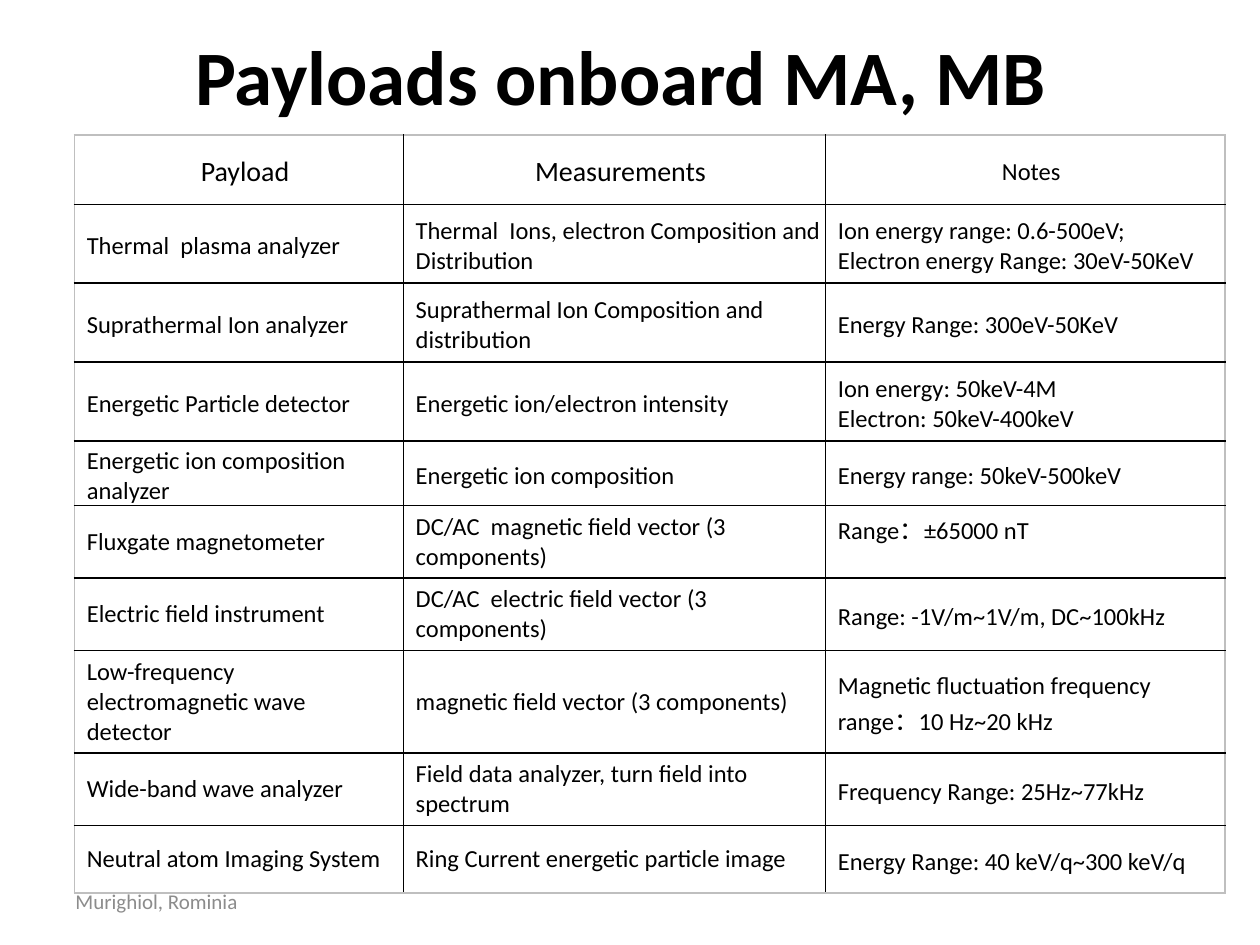
import pptx
import pptx.util
from lxml import etree
from pptx.dml.color import RGBColor
from pptx.enum.text import MSO_ANCHOR, PP_ALIGN
from pptx.oxml.ns import qn
from pptx.util import Cm, Pt

FONT = "Calibri"
BLACK = RGBColor(0x00, 0x00, 0x00)
WHITE = RGBColor(0xFF, 0xFF, 0xFF)
FOOTER_GREY = RGBColor(0x8C, 0x8C, 0x8C)
FRAME_GREY = RGBColor(0xBF, 0xBF, 0xBF)

TITLE = "Payloads onboard MA, MB "
FOOTER = "Murighiol, Rominia"
ROWS = [
    ("Payload", "Measurements", "Notes"),
    ("Thermal  plasma analyzer",
     "Thermal  Ions, electron Composition and Distribution",
     "Ion energy range: 0.6-500eV;\nElectron energy Range: 30eV-50KeV"),
    ("Suprathermal Ion analyzer",
     "Suprathermal Ion Composition and distribution",
     "Energy Range: 300eV-50KeV"),
    ("Energetic Particle detector",
     "Energetic ion/electron intensity",
     "Ion energy: 50keV-4M\nElectron: 50keV-400keV"),
    ("Energetic ion composition analyzer",
     "Energetic ion composition",
     "Energy range: 50keV-500keV"),
    ("Fluxgate magnetometer",
     "DC/AC  magnetic field vector (3 components)",
     "Range：±65000 nT"),
    ("Electric field instrument",
     "DC/AC  electric field vector (3 components)",
     "Range: -1V/m~1V/m, DC~100kHz"),
    ("Low-frequency electromagnetic wave detector",
     "magnetic field vector (3 components)",
     "Magnetic fluctuation frequency range：10 Hz~20 kHz"),
    ("Wide-band wave analyzer",
     "Field data analyzer, turn field into spectrum",
     "Frequency Range: 25Hz~77kHz"),
    ("Neutral atom Imaging System",
     "Ring Current energetic particle image",
     "Energy Range: 40 keV/q~300 keV/q"),
]
COLUMN_WIDTHS = [6.63, 8.51, 8.05]
ROW_HEIGHTS = [1.4, 1.59, 1.59, 1.59, 1.3, 1.46, 1.46, 2.06, 1.46, 1.36]
FIRST_FIELD_ROW = 5  # from here the first two columns have even margins
TOP_ANCHORED = (5, 2)


def format_text(text_frame, size, color, alignment=PP_ALIGN.LEFT, bold=False):
    for paragraph in text_frame.paragraphs:
        paragraph.alignment = alignment
        for run in paragraph.runs:
            run.font.name = FONT
            run.font.size = Pt(size)
            run.font.bold = bold
            run.font.color.rgb = color


def add_border(cell, side, color):
    """Draw one side (L, R, T or B) of a cell; call before filling the cell."""
    properties = cell._tc.get_or_add_tcPr()
    line = etree.SubElement(properties, qn(f"a:ln{side}"), w=str(Pt(1)))
    fill = etree.SubElement(line, qn("a:solidFill"))
    etree.SubElement(fill, qn("a:srgbClr"), val=str(color))


def format_cell(cell, row, column):
    outer_sides = {
        "L": column == 0,
        "R": column == len(COLUMN_WIDTHS) - 1,
        "T": row == 0,
        "B": row == len(ROWS) - 1,
    }
    for side, is_outer in outer_sides.items():
        add_border(cell, side, FRAME_GREY if is_outer else BLACK)
    cell.fill.solid()
    cell.fill.fore_color.rgb = WHITE

    even_margins = row >= FIRST_FIELD_ROW and column < 2
    cell.margin_left = Cm(0.25)
    cell.margin_right = Cm(0.25 if even_margins else 0)
    cell.margin_top = Cm(0.13 if even_margins else 0.1)
    cell.margin_bottom = Cm(0.13 if even_margins else 0)
    is_top = (row, column) == TOP_ANCHORED
    cell.vertical_anchor = MSO_ANCHOR.TOP if is_top else MSO_ANCHOR.MIDDLE

    size = 16 if row == 0 and column < 2 else 14
    alignment = PP_ALIGN.CENTER if row == 0 else PP_ALIGN.LEFT
    format_text(cell.text_frame, size, BLACK, alignment)


def add_payload_table(slide):
    table = slide.shapes.add_table(
        len(ROWS), len(COLUMN_WIDTHS), Cm(1.5), Cm(2.72),
        Cm(sum(COLUMN_WIDTHS)), Cm(sum(ROW_HEIGHTS))).table
    table.first_row = False
    table.horz_banding = False
    for column, width in zip(table.columns, COLUMN_WIDTHS):
        column.width = Cm(width)
    for row, height in zip(table.rows, ROW_HEIGHTS):
        row.height = Cm(height)
    for row, texts in enumerate(ROWS):
        for column, text in enumerate(texts):
            cell = table.cell(row, column)
            cell.text_frame.text = text
            format_cell(cell, row, column)


def main():
    presentation = pptx.Presentation()
    presentation.slide_width = Cm(25.4)
    presentation.slide_height = Cm(19.05)
    slide = presentation.slides.add_slide(presentation.slide_layouts[5])

    title = slide.shapes.title
    title.left, title.top = Cm(1.27), Cm(-0.08)
    title.width, title.height = Cm(22.86), Cm(3.18)
    title.text_frame.text = TITLE
    title.text_frame.vertical_anchor = MSO_ANCHOR.MIDDLE
    format_text(title.text_frame, 44, BLACK, PP_ALIGN.CENTER, bold=True)

    add_payload_table(slide)

    footer = slide.shapes.add_textbox(Cm(1.27), Cm(17.65), Cm(5.92), Cm(1.02))
    footer.text_frame.word_wrap = True
    footer.text_frame.vertical_anchor = MSO_ANCHOR.MIDDLE
    footer.text_frame.text = FOOTER
    format_text(footer.text_frame, 12, FOOTER_GREY)

    presentation.save("out.pptx")


if __name__ == "__main__":
    main()
